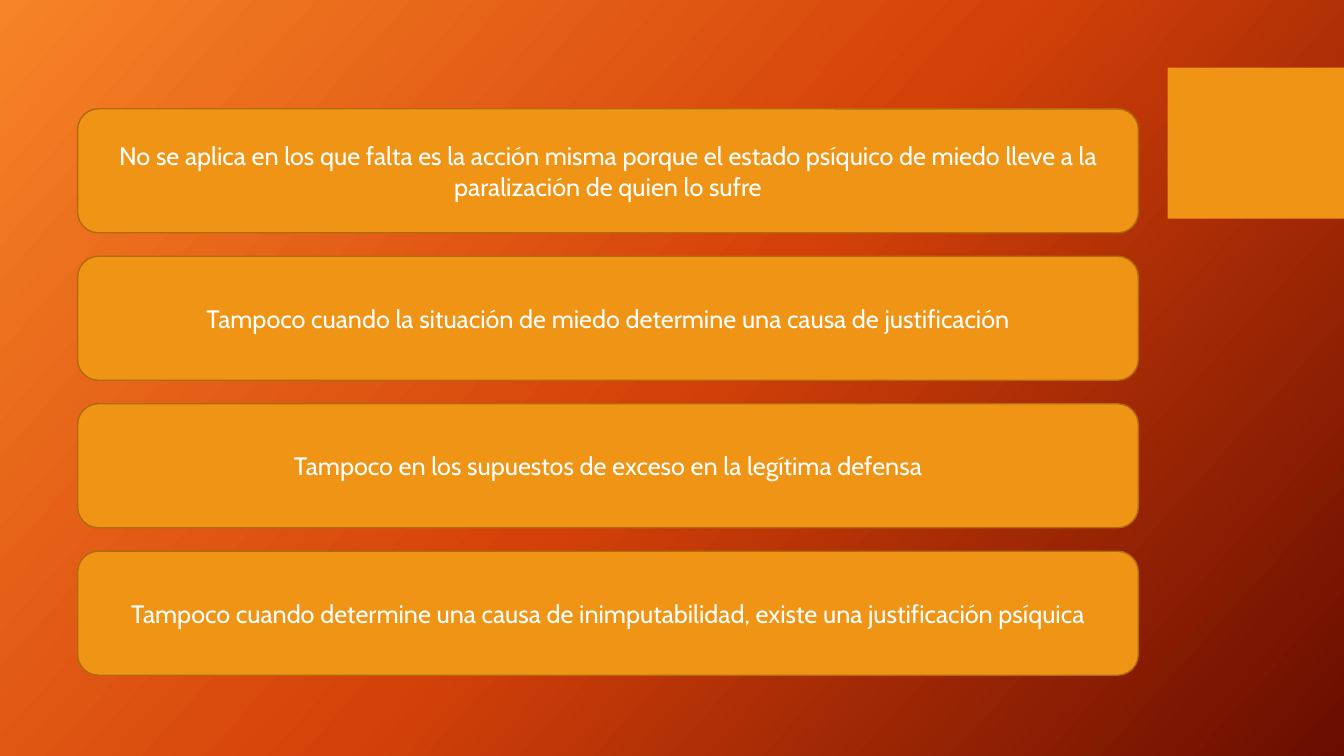
from copy import deepcopy

from pptx import Presentation
from pptx.dml.color import RGBColor
from pptx.enum import shapes, text
from pptx.oxml.ns import qn
from pptx.util import Inches, Pt


def colour(hex_value):
    return RGBColor.from_string(hex_value)


prs = Presentation()
prs.slide_width, prs.slide_height = Inches(13.33), Inches(7.5)
slide = prs.slides.add_slide(prs.slide_layouts[6])

# Diagonal background gradient with three stops
background = slide.background.fill
background.gradient()
background.gradient_angle = 360 - 42
stop_list = slide.element.find(".//" + qn("a:gsLst"))
stop_list.append(deepcopy(stop_list[-1]))
gradient = [(0, "F68327"), (0.5, "D54209"), (1, "690D00")]
for stop, (position, shade) in zip(background.gradient_stops, gradient):
    stop.position = position
    stop.color.rgb = colour(shade)

# Accent block at the right edge
accent = slide.shapes.add_shape(
    shapes.MSO_SHAPE.RECTANGLE, Inches(11.58), Inches(0.67), Inches(1.75), Inches(1.5))
accent.shadow.inherit = False
accent.fill.solid()
accent.fill.fore_color.rgb = colour("F09415")
accent.line.fill.background()

# Cases where the defence does not apply, evenly stacked
cases = [
    "No se aplica en los que falta es la acción misma porque el estado psíquico "
    "de miedo lleve a la paralización de quien lo sufre",
    "Tampoco cuando la situación de miedo determine una causa de justificación",
    "Tampoco en los supuestos de exceso en la legítima defensa",
    "Tampoco cuando determine una causa de inimputabilidad, existe una justificación psíquica",
]
frame_format = {
    "word_wrap": True,
    "vertical_anchor": text.MSO_ANCHOR.MIDDLE,
    "margin_left": Inches(0.05),
    "margin_right": Inches(0.05),
    "margin_top": Inches(0.05),
    "margin_bottom": Inches(0.05),
}
font_format = {"name": "Cabin", "size": Pt(18)}
first_top, pitch = 1.08, 1.463

for row, case in enumerate(cases):
    card = slide.shapes.add_shape(
        shapes.MSO_SHAPE.ROUNDED_RECTANGLE,
        Inches(0.77), Inches(first_top + row * pitch), Inches(10.52), Inches(1.23))
    card.adjustments[0] = 0.167
    card.shadow.inherit = False
    card.fill.solid()
    card.fill.fore_color.rgb = colour("F09415")
    card.line.color.rgb = colour("AF6C0F")
    card.line.width = Pt(1)

    for name, value in frame_format.items():
        setattr(card.text_frame, name, value)
    paragraph = card.text_frame.paragraphs[0]
    paragraph.alignment = text.PP_ALIGN.CENTER
    run = paragraph.add_run()
    run.text = case
    for name, value in font_format.items():
        setattr(run.font, name, value)
    run.font.color.rgb = colour("FFFFFF")

prs.save("out.pptx")
